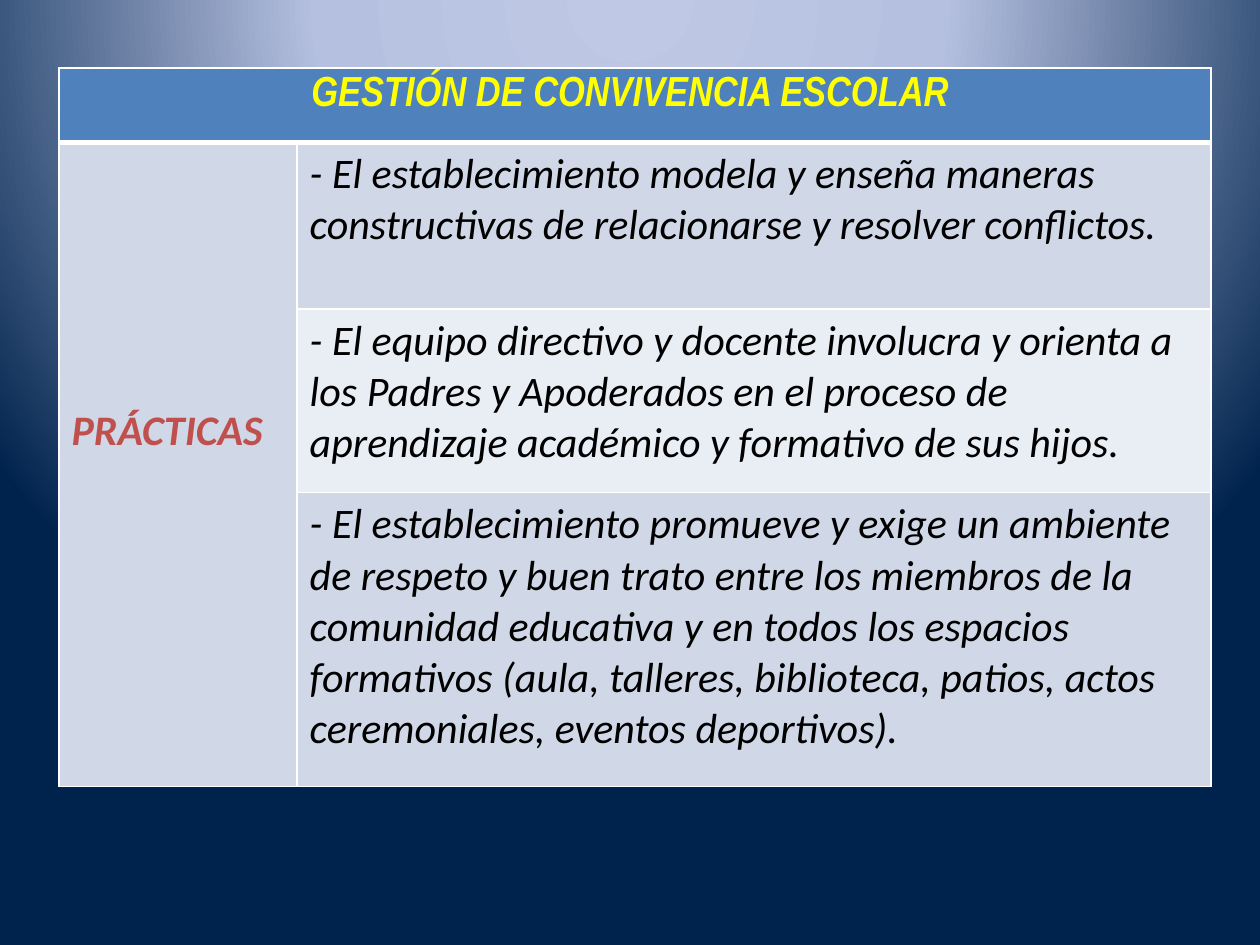
from pptx import Presentation
from pptx.dml.color import RGBColor
from pptx.enum.text import MSO_ANCHOR, PP_ALIGN
from pptx.oxml import parse_xml
from pptx.oxml.ns import nsdecls
from pptx.util import Cm, Pt

COLORS = {
    "header": "4F81BD", "band": "D0D8E8", "light": "E9EDF4", "border": "FFFFFF",
    "title": "FFFF00", "label": "C0504D", "text": "000000",
    "glow": "BFC9E5", "halo": "B5C0E0", "navy": "00234D",
}
PRACTICES = [
    "- El establecimiento modela y enseña maneras constructivas de relacionarse "
    "y resolver conflictos.",
    "- El equipo directivo y docente involucra y orienta a los Padres y Apoderados "
    "en el proceso de aprendizaje académico y formativo de sus hijos.",
    "- El establecimiento promueve y exige un ambiente de respeto y buen trato entre "
    "los miembros de la comunidad educativa y en todos los espacios formativos (aula, "
    "talleres, biblioteca, patios, actos ceremoniales, eventos deportivos).",
]


def write(tf, text, font="Calibri", size=24, color="text", bold=False, align=PP_ALIGN.LEFT):
    p = tf.paragraphs[0]
    p.alignment = align
    r = p.add_run()
    r.text = text
    r.font.name, r.font.size = font, Pt(size)
    r.font.bold, r.font.italic = bold, True
    r.font.color.rgb = RGBColor.from_string(COLORS[color])


class Deck:
    """Hold the table style and the current slide."""

    border, heavy = 1, 3

    def __init__(self, prs):
        self.s = prs.slides.add_slide(prs.slide_layouts[6])

    def background(self, stops):
        fill = self.s.background.fill
        fill.gradient()
        bg = self.s._element.cSld.bg.bgPr
        gs = "".join(f'<a:gs pos="{pos * 1000}"><a:srgbClr val="{COLORS[c]}"/></a:gs>'
                     for pos, c in stops)
        grad = parse_xml(
            f'<a:gradFill {nsdecls("a")} rotWithShape="1"><a:gsLst>{gs}</a:gsLst>'
            '<a:path path="circle"><a:fillToRect l="50000" t="-80000" r="50000" b="180000"/>'
            '</a:path></a:gradFill>')
        bg.replace(bg[0], grad)

    def table(self, x, y, cols, rows):
        sp = self.s.shapes.add_table(len(rows), len(cols), Cm(x), Cm(y),
                                     Cm(sum(cols)), Cm(sum(rows)))
        tbl = sp.table
        tbl.first_row = tbl.horz_banding = False
        for col, w in zip(tbl.columns, cols):
            col.width = Cm(w)
        for row, h in zip(tbl.rows, rows):
            row.height = Cm(h)
        return tbl

    def cell(self, cell, fill, bottom=border, top=border):
        cell.fill.solid()
        cell.fill.fore_color.rgb = RGBColor.from_string(COLORS[fill])
        widths = {"lnL": self.border, "lnR": self.border, "lnT": top, "lnB": bottom}
        for i, (side, w) in enumerate(widths.items()):
            cell._tc.get_or_add_tcPr().insert(i, parse_xml(
                f'<a:{side} {nsdecls("a")} w="{Pt(w)}"><a:solidFill>'
                f'<a:srgbClr val="{COLORS["border"]}"/></a:solidFill></a:{side}>'))


def main():
    prs = Presentation()
    prs.slide_width, prs.slide_height = Cm(25.4), Cm(19.05)
    deck = Deck(prs)
    deck.background([(0, "glow"), (40, "halo"), (100, "navy")])

    tbl = deck.table(1.19, 1.37, [4.8, 18.42], [1.5, 3.36, 3.7, 5.92])
    title, label = tbl.cell(0, 0), tbl.cell(1, 0)
    title.merge(tbl.cell(0, 1))
    label.merge(tbl.cell(3, 0))
    for col in range(2):
        deck.cell(tbl.cell(0, col), "header", bottom=deck.heavy)
    for row, text in enumerate(PRACTICES, 1):
        top = deck.heavy if row == 1 else deck.border
        deck.cell(tbl.cell(row, 0), "band", top=top)
        deck.cell(tbl.cell(row, 1), "band" if row % 2 else "light", top=top)
        write(tbl.cell(row, 1).text_frame, text)

    title.margin_top, title.margin_bottom = Cm(0.15), 0
    write(title.text_frame, "GESTIÓN DE CONVIVENCIA ESCOLAR ", font="Arial Narrow",
          color="title", bold=True, align=PP_ALIGN.CENTER)
    label.vertical_anchor = MSO_ANCHOR.MIDDLE
    label.margin_bottom = Cm(1.45)
    write(label.text_frame, "PRÁCTICAS", color="label", bold=True)
    prs.save("out.pptx")


if __name__ == "__main__":
    main()
